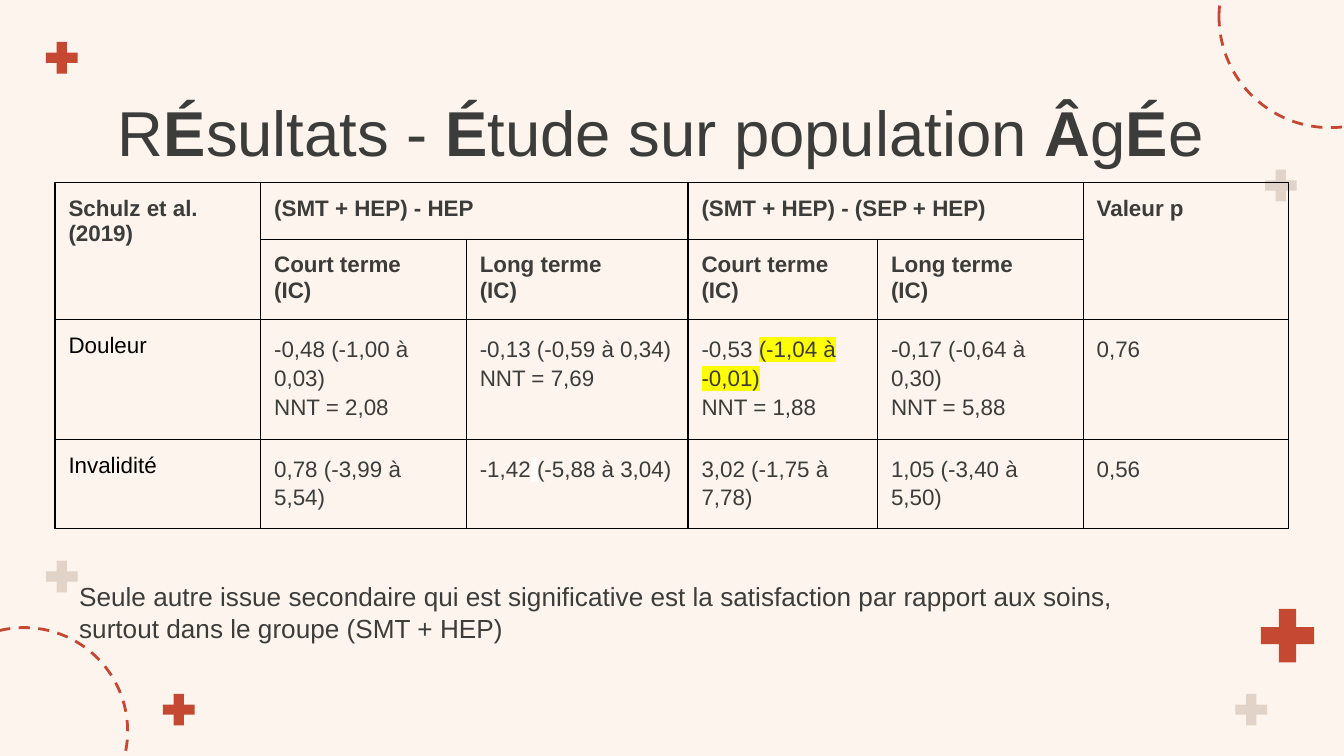
from lxml import etree
from pptx import Presentation
from pptx.dml.color import RGBColor
from pptx.enum.dml import MSO_LINE
from pptx.enum.shapes import MSO_SHAPE
from pptx.oxml import parse_xml
from pptx.oxml.ns import nsdecls, qn
from pptx.util import Inches, Pt

PLUS, OVAL, DASH = MSO_SHAPE.MATH_PLUS, MSO_SHAPE.OVAL, MSO_LINE.DASH
CREAM, RED, SAND, INK, BLACK = "FDF5ED", "C44832", "E1D3C8", "3C3C3B", "000000"
YELLOW, WHITE = "FFFF00", "FFFFFF"

# left, top, size, colour
PLUSES = [
    (9.31, 4.46, 0.54, RED), (1.17, 5.12, 0.32, RED), (0.3, 0.27, 0.32, RED),
    (9.37, 1.22, 0.32, SAND), (9.15, 5.12, 0.32, SAND), (0.3, 4.13, 0.32, SAND),
]
CIRCLES = [(-0.59, 4.67, 1.54), (9.07, -0.7, 1.65)]

# A paragraph is a list of (text, format changes)
BOLD = {"bold": True}
TITLE = [[
    ("R", {}), ("É", BOLD), ("sultats - ", {}), ("É", BOLD),
    ("tude sur population ", {}), ("Â", BOLD), ("g", {}), ("É", BOLD), ("e", {}),
]]
NOTE = [
    "Seule autre issue secondaire qui est significative est la satisfaction par rapport aux soins,",
    "surtout dans le groupe (SMT + HEP)",
]
SHORT_TERM, LONG_TERM = ["Court terme", "(IC)"], ["Long terme", "(IC)"]
TABLE = [
    [["Schulz et al.", "(2019)"], ["(SMT + HEP) - HEP"], [],
     ["(SMT + HEP) - (SEP + HEP)"], [], ["Valeur p"]],
    [[], SHORT_TERM, LONG_TERM, SHORT_TERM, LONG_TERM, []],
    [["Douleur"],
     ["-0,48 (-1,00 à 0,03)", "NNT = 2,08"],
     ["-0,13 (-0,59 à 0,34)", "NNT = 7,69"],
     [[("-0,53 ", {}), ("(-1,04 à -0,01)", {"highlight": YELLOW})], "NNT = 1,88"],
     ["-0,17 (-0,64 à 0,30)", "NNT = 5,88"],
     ["0,76"]],
    [["Invalidité"],
     ["0,78 (-3,99 à 5,54)"],
     [[("-1,42", {}), (" ", {"highlight": WHITE}), ("(-5,88 à 3,04)", {})]],
     ["3,02 (-1,75 à 7,78)"],
     ["1,05 (-3,40 à 5,50)"],
     ["0,56"]],
]
MERGES = [((0, 0), (1, 0)), ((0, 1), (0, 2)), ((0, 3), (0, 4)), ((0, 5), (1, 5))]
COL_WIDTHS = [1.53, 1.53, 1.65, 1.41, 1.53, 1.53]
ROW_HEIGHT = 0.42  # a minimum: rows grow with their text
TABLE_HEIGHT = 2.53
HEADER_ROWS = 2


def rgb(colour):
    return RGBColor.from_string(colour)


def write(tf, paragraphs, size, colour=INK, bold=False, spacing=None):
    for i, content in enumerate(paragraphs):
        p = tf.paragraphs[0] if i == 0 else tf.add_paragraph()
        if spacing:
            p.line_spacing = spacing
        runs = [(content, {})] if isinstance(content, str) else content
        for text, changes in runs:
            r = p.add_run()
            r.text = text
            fmt = {"name": "Arial", "size": Pt(size), "bold": bold, **changes}
            highlight = fmt.pop("highlight", None)
            for key, value in fmt.items():
                setattr(r.font, key, value)
            r.font.color.rgb = rgb(colour)
            if highlight:
                mark = parse_xml(f'<a:highlight {nsdecls("a")}><a:srgbClr val="{highlight}"/></a:highlight>')
                r.font.fill._xPr.find(qn("a:solidFill")).addnext(mark)


def add_text(s, box, paragraphs, size, wrap, margin):
    tf = s.shapes.add_textbox(*map(Inches, box)).text_frame
    tf.word_wrap = wrap
    tf.margin_left = tf.margin_right = Inches(0.1)
    tf.margin_top = tf.margin_bottom = Inches(margin)
    write(tf, paragraphs, size)


def add_mark(s, kind, left, top, size):
    sp = s.shapes.add_shape(kind, *map(Inches, (left, top, size, size)))
    sp.shadow.inherit = False
    return sp


def set_borders(cell):
    tcPr = cell._tc.get_or_add_tcPr()
    for i, side in enumerate(("lnL", "lnR", "lnT", "lnB")):
        ln = etree.Element(qn(f"a:{side}"), w=str(Pt(0.75)))
        fill = etree.SubElement(ln, qn("a:solidFill"))
        etree.SubElement(fill, qn("a:srgbClr"), val=BLACK)
        tcPr.insert(i, ln)


def add_results_table(s):
    box = (0.41, 1.36, sum(COL_WIDTHS), TABLE_HEIGHT)
    frame = s.shapes.add_table(len(TABLE), len(COL_WIDTHS), *map(Inches, box))
    table = frame.table
    table.first_row = table.horz_banding = False
    for column, width in zip(table.columns, COL_WIDTHS):
        column.width = Inches(width)
    for row in table.rows:
        row.height = Inches(ROW_HEIGHT)
    frame.height = Inches(TABLE_HEIGHT)
    for i, row in enumerate(TABLE):
        for j, paragraphs in enumerate(row):
            cell = table.cell(i, j)
            for side in ("left", "right", "top", "bottom"):
                setattr(cell, f"margin_{side}", Inches(0.1))
            cell.fill.background()
            set_borders(cell)
            header = i < HEADER_ROWS
            label = not header and j == 0
            write(cell.text_frame, paragraphs, 12, BLACK if label else INK,
                  bold=header, spacing=None if header or label else 1.15)
    for start, end in MERGES:
        table.cell(*start).merge(table.cell(*end))


def main():
    prs = Presentation()
    prs.slide_width, prs.slide_height = Inches(10), Inches(10 * 9 / 16)
    s = prs.slides.add_slide(prs.slide_layouts[6])
    s.background.fill.solid()
    s.background.fill.fore_color.rgb = rgb(CREAM)

    for left, top, size, colour in PLUSES:
        sp = add_mark(s, PLUS, left, top, size)
        sp.adjustments[0] = 0.235
        sp.fill.solid()
        sp.fill.fore_color.rgb = rgb(colour)
        sp.line.fill.background()
    for circle in CIRCLES:
        sp = add_mark(s, OVAL, *circle)
        sp.fill.background()
        sp.line.color.rgb = rgb(RED)
        sp.line.width = Pt(1.5)
        sp.line.dash_style = DASH

    add_text(s, (0.78, 0.59, 8.44, 0.63), TITLE, 34, wrap=True, margin=0.1)
    add_results_table(s)
    add_text(s, (0.49, 4.27, 7.98, 0.81), NOTE, 14, wrap=False, margin=0.05)
    prs.save("out.pptx")


if __name__ == "__main__":
    main()
